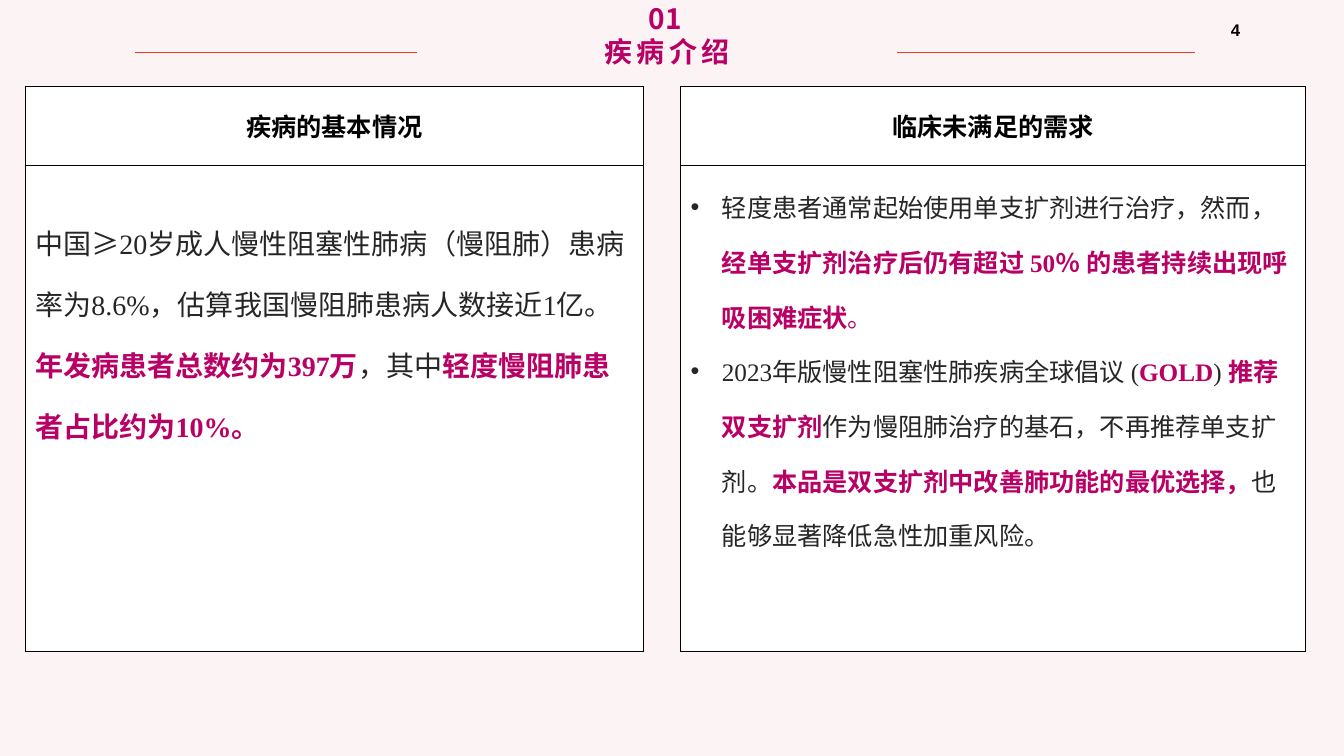
from lxml import etree
from pptx import Presentation
from pptx.dml.color import RGBColor
from pptx.enum.text import MSO_ANCHOR, MSO_AUTO_SIZE, PP_ALIGN
from pptx.enum.shapes import MSO_CONNECTOR
from pptx.oxml import parse_xml
from pptx.oxml.ns import nsdecls, qn
from pptx.util import Inches, Pt

COLORS = {
    "background": "FCF3F5",
    "accent": "B80065",
    "rule": "E4401D",
    "body": "262626",
    "black": "000000",
    "white": "FFFFFF",
}
CJK_FONT = "Noto Sans CJK SC"
LATIN_FONT = "Times New Roman"


def add_span(para, text, size, color, bold=False, font=LATIN_FONT):
    span = para.add_run()
    span.text = text
    span.font.size = Pt(size)
    span.font.bold = bold
    span.font.name = font
    span.font.color.rgb = RGBColor.from_string(COLORS[color])
    east_asian = etree.SubElement(span.font._element, qn("a:ea"))
    east_asian.set("typeface", CJK_FONT)
    return span


def style_cell(cell, sides, fill=None):
    """Draw black borders on the given sides only, then fill the cell."""
    properties = cell._tc.get_or_add_tcPr()
    for side in "LRTB":
        paint = "<a:noFill/>"
        if side in sides:
            paint = f'<a:solidFill><a:srgbClr val="{COLORS["black"]}"/></a:solidFill>'
        properties.append(parse_xml(
            f'<a:ln{side} {nsdecls("a")} w="12700">{paint}</a:ln{side}>'))
    if fill:
        cell.fill.solid()
        cell.fill.fore_color.rgb = RGBColor.from_string(COLORS[fill])
    else:
        cell.fill.background()


deck = Presentation()
deck.slide_width, deck.slide_height = Inches(13.33), Inches(7.5)
page = deck.slides.add_slide(deck.slide_layouts[6])
page.background.fill.solid()
page.background.fill.fore_color.rgb = RGBColor.from_string(COLORS["background"])

# Section number and title
number_box = page.shapes.add_textbox(Inches(3.62), Inches(-0.03), Inches(5.96), Inches(0.44))
number_box.text_frame.word_wrap = True
para = number_box.text_frame.paragraphs[0]
para.alignment = PP_ALIGN.CENTER
add_span(para, "01", 20, "accent", True, CJK_FONT)

title_box = page.shapes.add_textbox(Inches(5.97), Inches(0.34), Inches(1.29), Inches(0.34))
frame = title_box.text_frame
frame.word_wrap = False
frame.auto_size = MSO_AUTO_SIZE.SHAPE_TO_FIT_TEXT
frame.margin_left = frame.margin_right = frame.margin_top = frame.margin_bottom = 0
para = frame.paragraphs[0]
para.alignment = PP_ALIGN.CENTER
title = add_span(para, "疾病介绍", 20, "accent", True, CJK_FONT)
title.font._element.set("spc", "300")

# Rules on either side of the title
for start, end in [(8.9, 11.85), (1.34, 4.14)]:
    rule = page.shapes.add_connector(
        MSO_CONNECTOR.STRAIGHT, Inches(start), Inches(0.52), Inches(end), Inches(0.52))
    rule.line.color.rgb = RGBColor.from_string(COLORS["rule"])
    rule.line.width = Pt(1.25)
    etree.SubElement(rule._element.spPr, qn("a:effectLst"))

page_box = page.shapes.add_textbox(Inches(12.11), Inches(0.15), Inches(1.21), Inches(0.4))
page_box.text_frame.word_wrap = True
add_span(page_box.text_frame.paragraphs[0], "4", 12, "black", True, "Arial")

# Two panels with an empty column between them
table = page.shapes.add_table(
    2, 3, Inches(0.25), Inches(0.86), Inches(12.7), Inches(5.6)).table
table.first_row = table.horz_banding = False
for column, width in zip(table.columns, [6.13, 0.37, 6.2]):
    column.width = Inches(width)
for row, height in zip(table.rows, [0.78, 4.82]):
    row.height = Inches(height)
for row in range(2):
    style_cell(table.cell(row, 0), "LRTB", "white")
    style_cell(table.cell(row, 1), "LR")
    style_cell(table.cell(row, 2), "LRTB", "white")
table.cell(0, 1).merge(table.cell(1, 1))

for column, heading in [(0, "疾病的基本情况"), (2, "临床未满足的需求")]:
    cell = table.cell(0, column)
    cell.vertical_anchor = MSO_ANCHOR.MIDDLE
    para = cell.text_frame.paragraphs[0]
    para.alignment = PP_ALIGN.CENTER
    add_span(para, heading, 18, "black", True)

# Each paragraph is a list of (text, highlighted) pairs
overview = [[
    ("中国≥20岁成人慢性阻塞性肺病（慢阻肺）患病率为8.6%，估算我国慢阻肺患病人数接近1亿。", False),
    ("年发病患者总数约为397万", True),
    ("，其中", False),
    ("轻度慢阻肺患者占比约为10%。", True),
]]
needs = [
    [
        ("轻度患者通常起始使用单支扩剂进行治疗，然而，", False),
        ("经单支扩剂治疗后仍有超过 50％ 的患者持续出现呼吸困难症状", True),
    ],
    [
        ("2023年版慢性阻塞性肺疾病全球倡议 (", False),
        ("GOLD", True),
        (") ", False),
        ("推荐双支扩剂", True),
        ("作为慢阻肺治疗的基石，不再推荐单支扩剂。", False),
        ("本品是双支扩剂中改善肺功能的最优选择，", True),
        ("也能够显著降低急性加重风险。", False),
    ],
]

for column, size, bulleted, content in [(0, 20, False, overview), (2, 18, True, needs)]:
    frame = table.cell(1, column).text_frame
    for index, spans in enumerate(content):
        para = frame.paragraphs[0] if index == 0 else frame.add_paragraph()
        if bulleted:
            properties = para._p.get_or_add_pPr()
            properties.set("marL", str(Inches(0.31)))
            properties.set("indent", str(Inches(-0.31)))
            etree.SubElement(properties, qn("a:buFont")).set("typeface", "Arial")
            etree.SubElement(properties, qn("a:buChar")).set("char", "•")
        para.line_spacing = 1.5
        for text, highlighted in spans:
            add_span(para, text, size, "accent" if highlighted else "body", highlighted)
table.cell(1, 0).margin_top = Inches(0.36)
# The full stop closing the first need keeps the accent colour in regular weight
add_span(table.cell(1, 2).text_frame.paragraphs[0], "。", 18, "accent")

deck.save("out.pptx")
